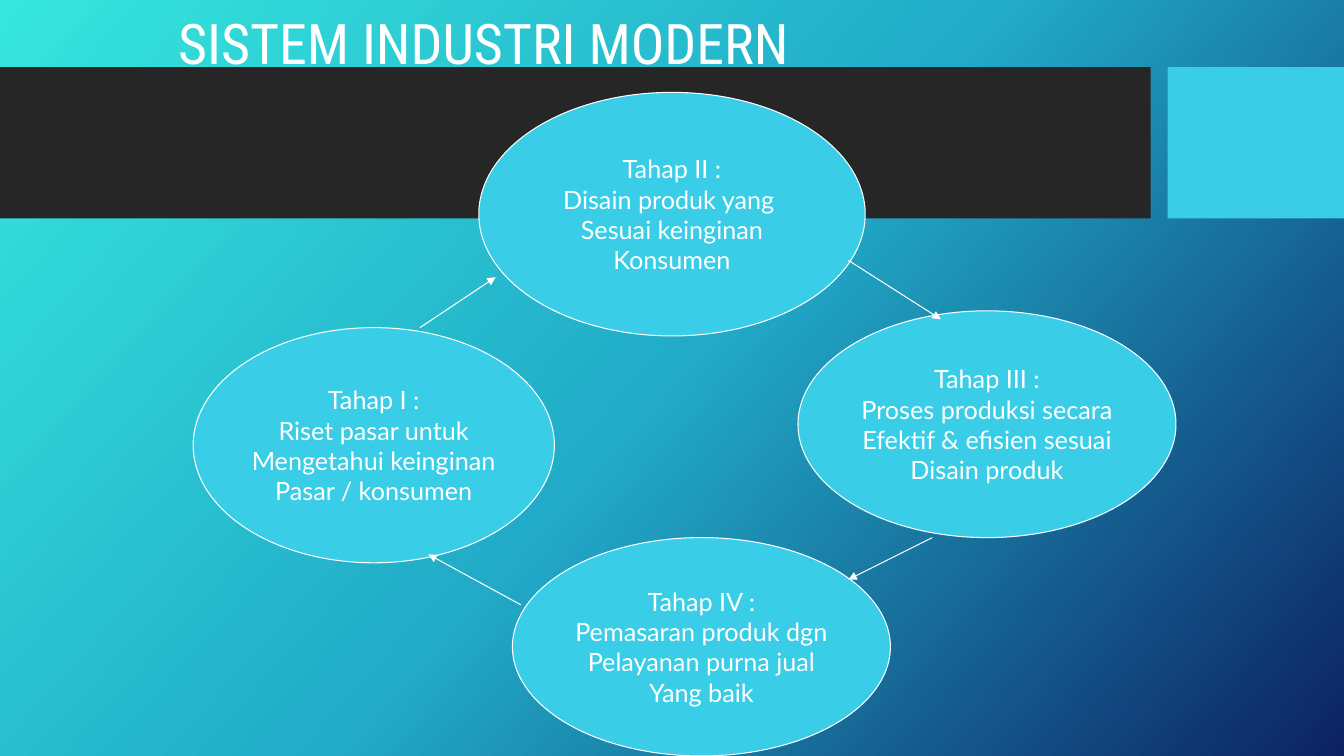
from copy import deepcopy

from lxml import etree
from pptx import Presentation
from pptx.dml.color import RGBColor
from pptx.enum.shapes import MSO_CONNECTOR, MSO_SHAPE
from pptx.enum.text import MSO_ANCHOR, MSO_AUTO_SIZE, PP_ALIGN
from pptx.oxml.ns import qn
from pptx.util import Inches, Pt

RECTANGLE, ELLIPSE = MSO_SHAPE.RECTANGLE, MSO_SHAPE.OVAL
STRAIGHT = MSO_CONNECTOR.STRAIGHT
MIDDLE, LEFT, CENTER = MSO_ANCHOR.MIDDLE, PP_ALIGN.LEFT, PP_ALIGN.CENTER
NO_AUTOFIT = MSO_AUTO_SIZE.NONE

# The slide is a grid of 160 columns by 90 rows, twelve to the inch
COLUMNS, ROWS = 160, 90
CELL = Inches(1) // 12

WHITE, DARK, CYAN = "FFFFFF", "262626", "39CDE7"
BACKGROUND_STOPS = [(0, "36E6DD"), (0.5, "21ABC8"), (1, "0C2263")]
BACKGROUND_ANGLE = 42

# Column, row, width, height and fill of the header bands
BANDS = [((0, 8, 137, 18), DARK), ((139, 8, 21, 18), CYAN)]

# Column, row, width, height and lines of each stage
STAGES = [
    ((57, 11, 46, 29),
     ["Tahap II :", "Disain produk yang ", "Sesuai keinginan", "Konsumen"]),
    ((23, 39, 43, 28),
     ["Tahap I :", "Riset pasar untuk", "Mengetahui keinginan", "Pasar / konsumen"]),
    ((95, 37, 45, 27),
     ["Tahap III :", "Proses produksi secara", "Efektif & efisien sesuai", "Disain produk"]),
    ((61, 64, 45, 26),
     ["Tahap IV :", "Pemasaran produk dgn", "Pelayanan purna jual", "Yang baik"]),
]

# Start column and row, end column and row
ARROWS = [(50, 39, 59, 33), (101, 31, 112, 38), (111, 64, 101, 69), (62, 72, 51, 66)]


def color(hex_string):
    return RGBColor.from_string(hex_string)


def cells(values):
    return [value * CELL for value in values]


def paint_background(slide):
    fill = slide.background.fill
    fill.gradient()
    fill.gradient_angle = 360 - BACKGROUND_ANGLE
    first_stop = slide.element.find(".//" + qn("a:gs"))
    first_stop.addnext(deepcopy(first_stop))
    for stop, (position, hex_string) in zip(fill.gradient_stops, BACKGROUND_STOPS):
        stop.position = position
        stop.color.rgb = color(hex_string)


def add_text(paragraph, text, size, font_name, alignment):
    paragraph.alignment = alignment
    run = paragraph.add_run()
    run.text = text
    run.font.size = Pt(size)
    run.font.name = font_name
    run.font.color.rgb = color(WHITE)


def style_line(line):
    line.color.rgb = color(WHITE)
    line.width = Pt(0.75)


def add_filled_shape(slide, kind, box, fill):
    shape = slide.shapes.add_shape(kind, *cells(box))
    shape.shadow.inherit = False
    shape.fill.solid()
    shape.fill.fore_color.rgb = color(fill)
    return shape


def add_band(slide, box, fill):
    band = add_filled_shape(slide, RECTANGLE, box, fill)
    band.line.fill.background()


def add_title(slide, text):
    title = slide.shapes.title
    title.left, title.top, title.width, title.height = cells((20, 0, 120, 11))
    frame = title.text_frame
    frame.auto_size = NO_AUTOFIT
    frame.word_wrap = True
    frame.vertical_anchor = MIDDLE
    paragraph = frame.paragraphs[0]
    paragraph.line_spacing = 0.9
    add_text(paragraph, text, 40, "Roboto Condensed", LEFT)
    # Bring the title in front of the bands
    slide.shapes.element.append(title.element)


def add_stage(slide, box, lines):
    stage = add_filled_shape(slide, ELLIPSE, box, CYAN)
    style_line(stage.line)
    frame = stage.text_frame
    frame.word_wrap = False
    frame.vertical_anchor = MIDDLE
    for index, text in enumerate(lines):
        paragraph = frame.add_paragraph() if index else frame.paragraphs[0]
        add_text(paragraph, text, 18, "Lato", CENTER)


def add_arrow(slide, ends):
    arrow = slide.shapes.add_connector(STRAIGHT, *cells(ends))
    style_line(arrow.line)
    properties = arrow.element.spPr
    line = properties.find(qn("a:ln"))
    etree.SubElement(line, qn("a:tailEnd"), type="triangle")
    etree.SubElement(properties, qn("a:effectLst"))


def main():
    presentation = Presentation()
    presentation.slide_width, presentation.slide_height = cells((COLUMNS, ROWS))
    slide = presentation.slides.add_slide(presentation.slide_layouts[5])

    # Background and header
    paint_background(slide)
    for box, fill in BANDS:
        add_band(slide, box, fill)
    add_title(slide, "SISTEM INDUSTRI MODERN")

    # Cycle of stages
    for box, lines in STAGES:
        add_stage(slide, box, lines)
    for ends in ARROWS:
        add_arrow(slide, ends)

    presentation.save("out.pptx")


if __name__ == "__main__":
    main()
